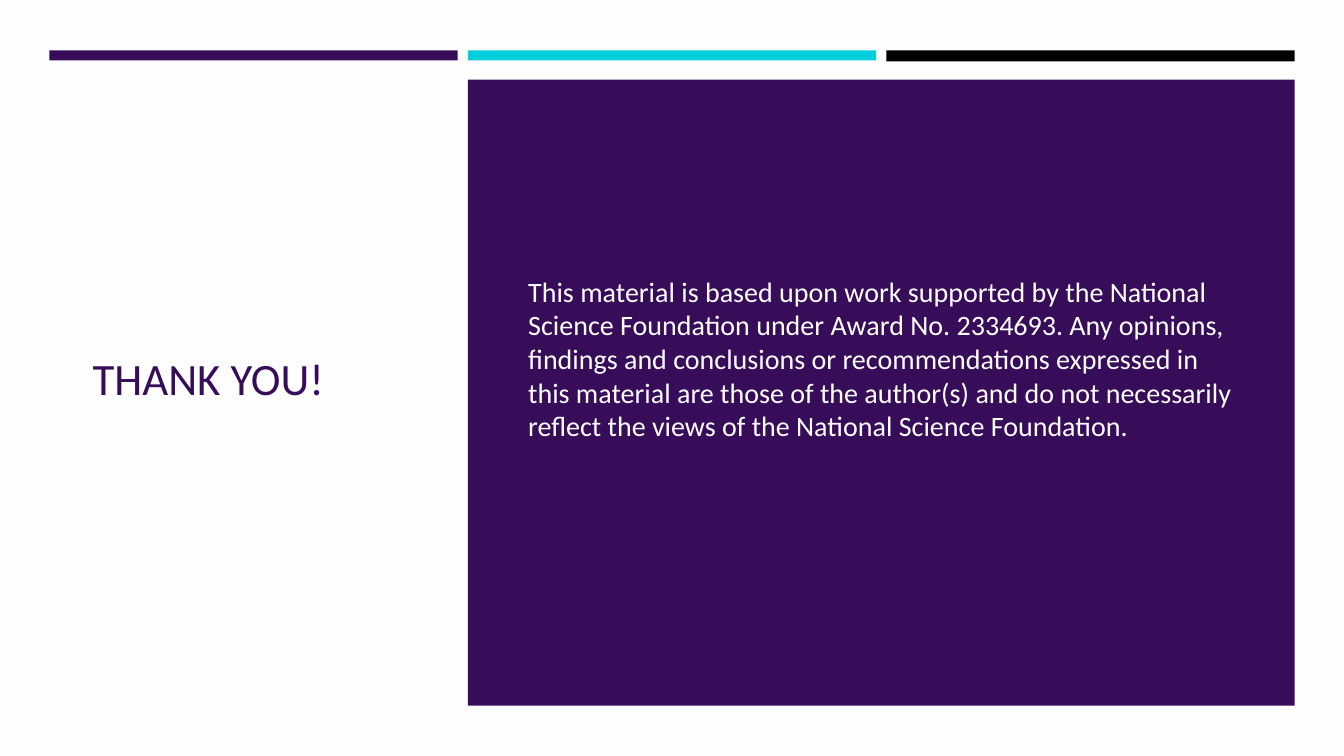
from dataclasses import dataclass

from pptx import Presentation
from pptx import util as u
from pptx.dml.color import RGBColor
from pptx.enum import shapes, text


@dataclass(frozen=True)
class Theme:
    """Colours, font and type sizes of the deck."""
    paper: str = "FFFEFF"
    purple: str = "370C59"
    cyan: str = "02CFDB"
    black: str = "000000"
    white: str = "FFFFFF"
    font: str = "Calibri"
    title_size: int = 32
    body_size: int = 20


class SlideBuilder:
    """Draws styled elements on one page."""

    def __init__(self, page, theme):
        """Keep the page and its theme."""
        self.page = page
        self.theme = theme

    def background(self, colour):
        """Fill the page background."""
        fill = self.page.background.fill
        fill.solid()
        fill.fore_color.rgb = RGBColor.from_string(colour)

    def block(self, left, top, width, height, colour):
        """Add a plain filled rectangle."""
        box = self.page.shapes.add_shape(
            shapes.MSO_SHAPE.RECTANGLE,
            *map(u.Inches, (left, top, width, height)))
        box.shadow.inherit = False
        box.fill.solid()
        box.fill.fore_color.rgb = RGBColor.from_string(colour)
        box.line.fill.background()

    def words(self, left, top, width, height, content, size, colour,
              bottom_margin=0.05):
        """Add a wrapped, vertically centred text box."""
        box = self.page.shapes.add_textbox(
            *map(u.Inches, (left, top, width, height)))
        frame = box.text_frame
        frame.word_wrap = True
        frame.vertical_anchor = text.MSO_ANCHOR.MIDDLE
        frame.margin_bottom = u.Inches(bottom_margin)
        para = frame.paragraphs[0]
        para.text = content
        para.font.name = self.theme.font
        para.font.size = u.Pt(size)
        para.font.color.rgb = RGBColor.from_string(colour)


def main():
    """Build and save the closing slide."""
    theme = Theme()
    deck = Presentation()
    deck.slide_width, deck.slide_height = u.Inches(13.33), u.Inches(7.5)
    page = deck.slides.add_slide(deck.slide_layouts[6])
    builder = SlideBuilder(page, theme)
    builder.background(theme.paper)

    bars = ((theme.purple, 0.1), (theme.cyan, 0.1), (theme.black, 0.11))
    for column, (colour, height) in enumerate(bars):
        builder.block(0.49 + column * 4.15, 0.5, 4.05, height, colour)
    builder.block(4.64, 0.79, 8.2, 6.21, theme.purple)

    builder.words(0.82, 1.17, 3.34, 5.15, "THANK YOU!",
                  theme.title_size, theme.purple)
    builder.words(
        5.14, 1.17, 7.22, 5.15,
        "This material is based upon work supported by the National Science "
        "Foundation under Award No. 2334693. Any opinions, findings and "
        "conclusions or recommendations expressed in this material are those "
        "of the author(s) and do not necessarily reflect the views of the "
        "National Science Foundation.",
        theme.body_size, theme.white, bottom_margin=0.43)
    deck.save("out.pptx")


if __name__ == "__main__":
    main()
